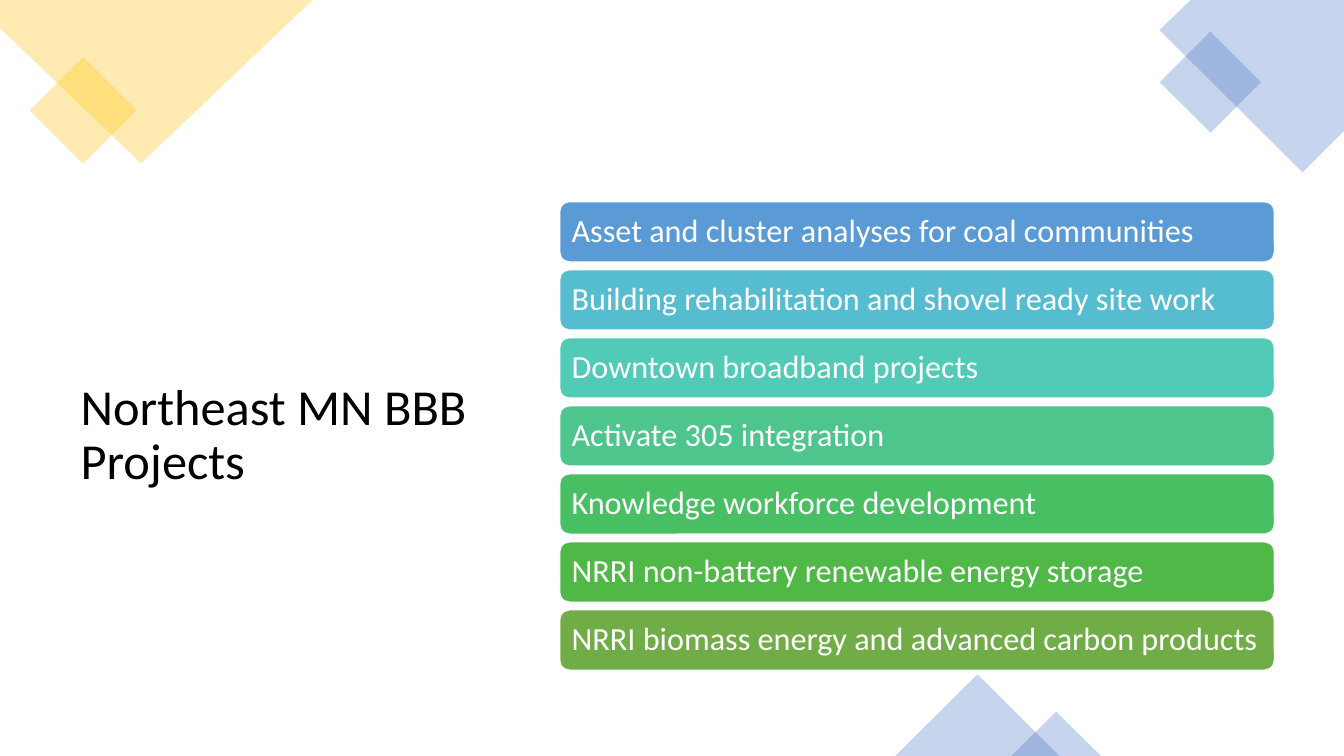
import pptx
import pptx.util
import pptx.dml.color
import pptx.enum.shapes
import pptx.enum.text
import pptx.oxml.ns
import lxml.etree

Inches = pptx.util.Inches
Pt = pptx.util.Pt
RGB = pptx.dml.color.RGBColor.from_string
KIND = pptx.enum.shapes.MSO_SHAPE
MIDDLE = pptx.enum.text.MSO_ANCHOR.MIDDLE
LEFT = pptx.enum.text.PP_ALIGN.LEFT

COLORS = {"gold": "FFC000", "blue": "4472C4", "white": "FFFFFF", "black": "000000"}


def tint(shape, name):
    """Fill with a 30 % opaque colour and no outline."""
    shape.shadow.inherit = False
    shape.line.fill.background()
    shape.fill.solid()
    shape.fill.fore_color.rgb = RGB(COLORS[name])
    color = shape.fill._xPr.find(".//" + pptx.oxml.ns.qn("a:srgbClr"))
    lxml.etree.SubElement(color, pptx.oxml.ns.qn("a:alpha"), val="30000")


def write(shape, text, size, name):
    """Set one left-aligned, vertically centred paragraph."""
    frame = shape.text_frame
    frame.text = text
    frame.word_wrap = True
    frame.auto_size = pptx.enum.text.MSO_AUTO_SIZE.NONE
    frame.vertical_anchor = MIDDLE
    para = frame.paragraphs[0]
    para.alignment = LEFT
    para.line_spacing = 0.9
    font = para.runs[0].font
    font.name, font.size = "Calibri", Pt(size)
    font.color.rgb = RGB(COLORS[name])


deck = pptx.Presentation()
deck.slide_width, deck.slide_height = Inches(13.33), Inches(7.5)
slide = deck.slides.add_slide(deck.slide_layouts[5])
shapes = slide.shapes

# Title
title = shapes.title
title.left, title.top = Inches(0.7), Inches(1.86)
title.width, title.height = Inches(4.33), Inches(4.94)
write(title, "Northeast MN BBB Projects", 36, "black")

# Large corner pieces
corners = [
    ("gold", [(0, 0), (3.1, 0), (1.4, 1.62), (0, 0.28)]),
    ("blue", [(11.81, 0), (13.33, 0), (13.33, 1.3), (12.92, 1.71), (11.5, 0.3)]),
]
for name, points in corners:
    dots = [(Inches(x), Inches(y)) for x, y in points]
    path = shapes.build_freeform(*dots[0])
    path.add_line_segments(dots[1:], close=True)
    tint(path.convert_to_shape(), name)

# Small diamonds and bottom triangles
accents = [
    (KIND.RECTANGLE, 45, "gold", (0.45, 0.72, 0.75, 0.75)),
    (KIND.RECTANGLE, 45, "blue", (11.65, 0.46, 0.71, 0.71)),
    (KIND.ISOSCELES_TRIANGLE, 0, "blue", (8.88, 6.69, 1.63, 0.81)),
    (KIND.ISOSCELES_TRIANGLE, 0, "blue", (10.03, 7.06, 0.89, 0.44)),
]
for kind, turn, name, box in accents:
    accent = shapes.add_shape(kind, *map(Inches, box))
    accent.rotation = turn
    tint(accent, name)

# Project bars
projects = [
    ("5B9BD5", "Asset and cluster analyses for coal communities"),
    ("56BCD0", "Building rehabilitation and shovel ready site work"),
    ("52CAB8", "Downtown broadband projects"),
    ("4DC58D", "Activate 305 integration"),
    ("49BF64", "Knowledge workforce development"),
    ("50B846", "NRRI non-battery renewable energy storage"),
    ("70AD47", "NRRI biomass energy and advanced carbon products"),
]
first, last = 2, 6.05
step = (last - first) / (len(projects) - 1)
for row, (color, text) in enumerate(projects):
    bar = shapes.add_shape(KIND.ROUNDED_RECTANGLE, Inches(5.55),
                           Inches(first + row * step), Inches(7.09), Inches(0.6))
    bar.shadow.inherit = False
    bar.fill.solid()
    bar.fill.fore_color.rgb = RGB(color)
    bar.line.color.rgb = RGB(COLORS["white"])
    bar.line.width = Pt(1)
    frame = bar.text_frame
    frame.margin_left = frame.margin_right = Inches(0.09)
    write(bar, text, 23, "white")

deck.save("out.pptx")
